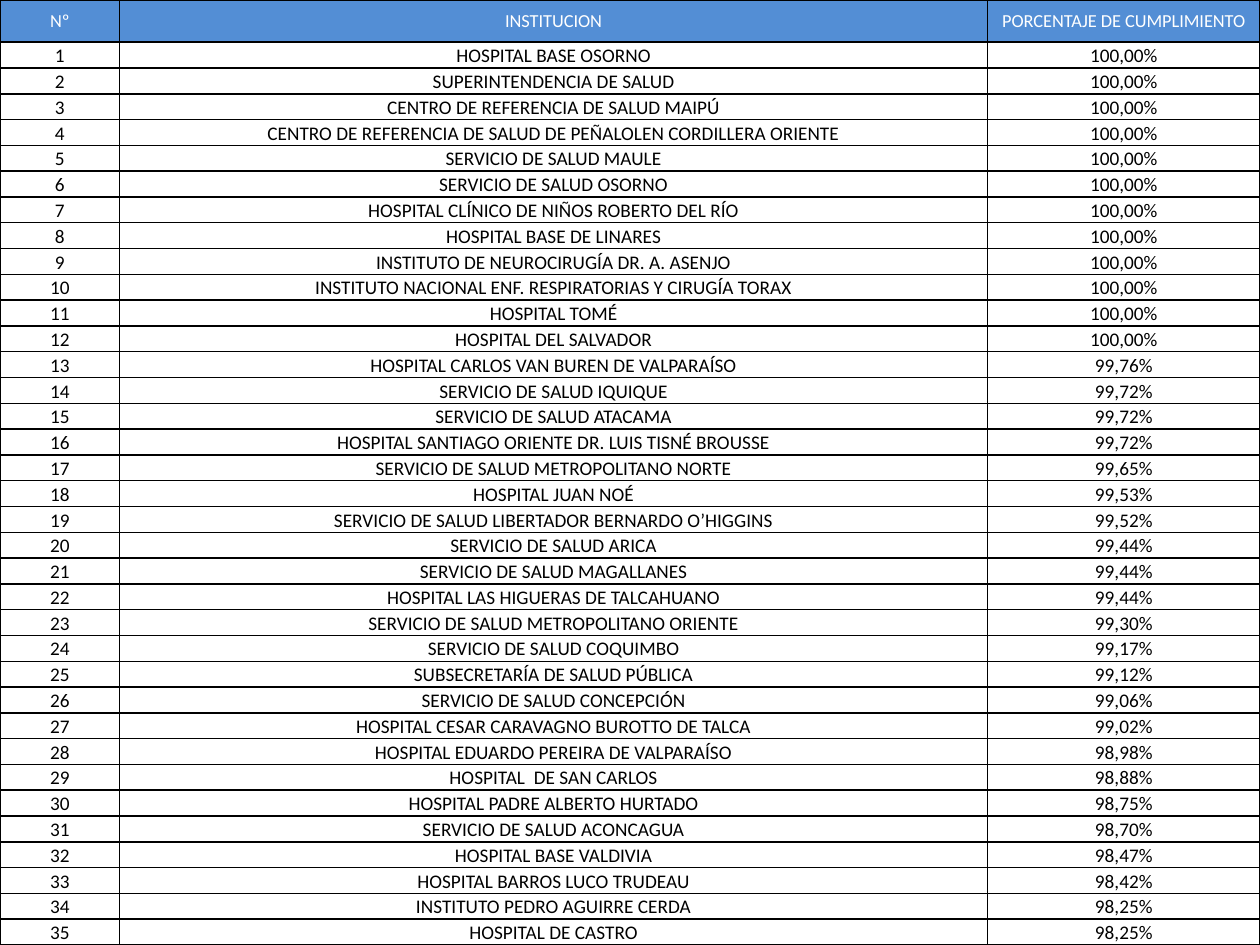
"""Build a one-slide table ranking health institutions by compliance."""
from lxml.etree import SubElement
from pptx import Presentation
from pptx.dml.color import RGBColor
from pptx.enum.text import MSO_ANCHOR, PP_ALIGN
from pptx.oxml.ns import qn
from pptx.util import Cm, Pt

BLACK = RGBColor(0x00, 0x00, 0x00)
WHITE = RGBColor(0xFF, 0xFF, 0xFF)
BLUE = RGBColor(0x53, 0x8E, 0xD5)

HEADINGS = ("Nº", "INSTITUCION", "PORCENTAJE DE CUMPLIMIENTO")
COLUMN_WIDTHS = (2.41, 17.5, 5.49)
HEADER_HEIGHT = 0.85
ROW_HEIGHT = 0.52
INSTITUTIONS = [
    ("HOSPITAL BASE OSORNO", "100,00%"),
    ("SUPERINTENDENCIA DE SALUD", "100,00%"),
    ("CENTRO DE REFERENCIA DE SALUD MAIPÚ", "100,00%"),
    ("CENTRO DE REFERENCIA DE SALUD DE PEÑALOLEN CORDILLERA ORIENTE", "100,00%"),
    ("SERVICIO DE SALUD MAULE", "100,00%"),
    ("SERVICIO DE SALUD OSORNO", "100,00%"),
    ("HOSPITAL CLÍNICO DE NIÑOS ROBERTO DEL RÍO", "100,00%"),
    ("HOSPITAL BASE DE LINARES", "100,00%"),
    ("INSTITUTO DE NEUROCIRUGÍA DR. A. ASENJO", "100,00%"),
    ("INSTITUTO NACIONAL ENF. RESPIRATORIAS Y CIRUGÍA TORAX", "100,00%"),
    ("HOSPITAL TOMÉ", "100,00%"),
    ("HOSPITAL DEL SALVADOR", "100,00%"),
    ("HOSPITAL CARLOS VAN BUREN DE VALPARAÍSO", "99,76%"),
    ("SERVICIO DE SALUD IQUIQUE", "99,72%"),
    ("SERVICIO DE SALUD ATACAMA", "99,72%"),
    ("HOSPITAL SANTIAGO ORIENTE DR. LUIS TISNÉ BROUSSE", "99,72%"),
    ("SERVICIO DE SALUD METROPOLITANO NORTE", "99,65%"),
    ("HOSPITAL JUAN NOÉ", "99,53%"),
    ("SERVICIO DE SALUD LIBERTADOR BERNARDO O’HIGGINS", "99,52%"),
    ("SERVICIO DE SALUD ARICA", "99,44%"),
    ("SERVICIO DE SALUD MAGALLANES", "99,44%"),
    ("HOSPITAL LAS HIGUERAS DE TALCAHUANO", "99,44%"),
    ("SERVICIO DE SALUD METROPOLITANO ORIENTE", "99,30%"),
    ("SERVICIO DE SALUD COQUIMBO", "99,17%"),
    ("SUBSECRETARÍA DE SALUD PÚBLICA", "99,12%"),
    ("SERVICIO DE SALUD CONCEPCIÓN", "99,06%"),
    ("HOSPITAL CESAR CARAVAGNO BUROTTO DE TALCA", "99,02%"),
    ("HOSPITAL EDUARDO PEREIRA DE VALPARAÍSO", "98,98%"),
    ("HOSPITAL  DE SAN CARLOS", "98,88%"),
    ("HOSPITAL PADRE ALBERTO HURTADO", "98,75%"),
    ("SERVICIO DE SALUD ACONCAGUA", "98,70%"),
    ("HOSPITAL BASE VALDIVIA", "98,47%"),
    ("HOSPITAL BARROS LUCO TRUDEAU", "98,42%"),
    ("INSTITUTO PEDRO AGUIRRE CERDA", "98,25%"),
    ("HOSPITAL DE CASTRO", "98,25%"),
]


def add_borders(cell):
    properties = cell._tc.get_or_add_tcPr()
    for side in ("a:lnL", "a:lnR", "a:lnT", "a:lnB"):
        line = SubElement(properties, qn(side), w=str(Pt(1)))
        fill = SubElement(line, qn("a:solidFill"))
        SubElement(fill, qn("a:srgbClr"), val=str(BLACK))


deck = Presentation()
deck.slide_width, deck.slide_height = Cm(25.4), Cm(19.05)
page = deck.slides.add_slide(deck.slide_layouts[6])

rows = [HEADINGS]
for number, (institution, compliance) in enumerate(INSTITUTIONS, start=1):
    rows.append((str(number), institution, compliance))

table = page.shapes.add_table(
    len(rows), len(HEADINGS), Cm(0), Cm(0), deck.slide_width, deck.slide_height
).table
table.first_row = False
table.horz_banding = False
for column, width in zip(table.columns, COLUMN_WIDTHS):
    column.width = Cm(width)

for row_index, texts in enumerate(rows):
    is_header = row_index == 0
    table.rows[row_index].height = Cm(HEADER_HEIGHT if is_header else ROW_HEIGHT)
    for column_index, text in enumerate(texts):
        cell = table.cell(row_index, column_index)
        cell.margin_left = cell.margin_right = cell.margin_top = Cm(0.02)
        cell.margin_bottom = Cm(0)
        cell.vertical_anchor = MSO_ANCHOR.MIDDLE if is_header else MSO_ANCHOR.BOTTOM
        add_borders(cell)
        if is_header:
            cell.fill.solid()
            cell.fill.fore_color.rgb = BLUE
        else:
            cell.fill.background()
        cell.text = text
        para = cell.text_frame.paragraphs[0]
        para.alignment = PP_ALIGN.CENTER
        para.font.name = "Calibri"
        para.font.size = Pt(10.5 if is_header else 11)
        para.font.color.rgb = WHITE if is_header else BLACK

deck.save("out.pptx")
